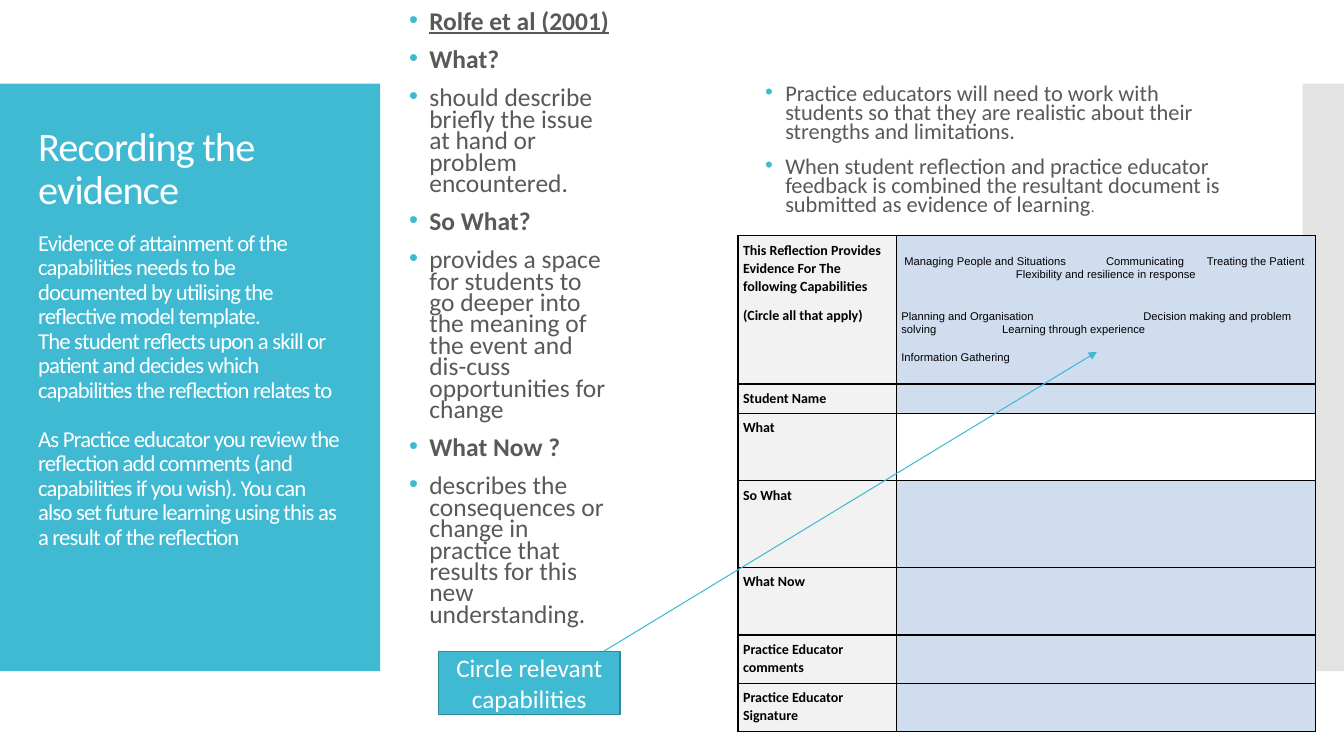
from dataclasses import dataclass

from lxml import etree
from pptx import Presentation
from pptx.dml.color import RGBColor
from pptx.enum.shapes import MSO_CONNECTOR, MSO_SHAPE
from pptx.enum.text import MSO_ANCHOR, PP_ALIGN
from pptx.oxml.ns import qn
from pptx.util import Inches, Pt

RECTANGLE = MSO_SHAPE.RECTANGLE
STRAIGHT = MSO_CONNECTOR.STRAIGHT
MIDDLE = MSO_ANCHOR.MIDDLE
CENTER = PP_ALIGN.CENTER


@dataclass(frozen=True)
class Theme:
    accent: str = "40BAD2"
    accent_dark: str = "2F8A9B"
    side: str = "C8C8C8"
    white: str = "FFFFFF"
    black: str = "000000"
    text: str = "595959"
    label_fill: str = "F2F2F2"
    field_fill: str = "D0DDEF"
    font: str = "Calibri"
    form_font: str = "Arial"
    title: float = 28.8
    intro: float = 16.2
    model: float = 18.2
    note: float = 16
    callout: float = 18
    label: float = 10
    option: float = 8
    small: float = 11


THEME = Theme()

INTRO = [
    ("Evidence of attainment of the capabilities needs to be documented by "
     "utilising the reflective model template.", 13),
    ("The student reflects upon a skill or patient and decides which "
     "capabilities the reflection relates to", 0),
    ("As Practice educator you review the reflection add comments (and "
     "capabilities if you wish). You can also set future learning using this "
     "as a result of the reflection", 17.5),
]
MODEL = [
    ("What?", "should describe briefly the issue at hand or problem encountered."),
    ("So What?", "provides a space for students to go deeper into the meaning of "
     "the event and dis-cuss opportunities for change"),
    ("What Now ?", "describes the consequences or change in practice that results "
     "for this new understanding."),
]
# Label, row height and field fill of each form row
FORM_ROWS = [
    ("This Reflection Provides Evidence For The following Capabilities", 1.47, THEME.field_fill),
    ("Student Name", 0.29, THEME.field_fill),
    ("What", 0.67, THEME.white),
    ("So What", 0.86, THEME.field_fill),
    ("What Now", 0.67, THEME.field_fill),
    ("Practice Educator comments", 0.48, THEME.field_fill),
    ("Practice Educator Signature", 0.48, THEME.field_fill),
]
# Text, space before and alignment of each line of capabilities
CAPABILITIES = [
    ("Managing People and Situations\tCommunicating\tTreating the Patient\t"
     "Flexibility and resilience in response", 0, CENTER),
    ("Planning and Organisation\tDecision making and problem solving\t"
     "Learning through experience", 20, None),
    ("Information Gathering", 10, None),
]


def rgb(color):
    return RGBColor.from_string(color)


def add_run(paragraph, text, size, color, font=THEME.font, bold=False, underline=False):
    run = paragraph.add_run()
    run.text = text
    run.font.size = Pt(size)
    run.font.name = font
    run.font.color.rgb = rgb(color)
    run.font.bold = bold
    run.font.underline = underline
    return run


def next_paragraph(frame, spacing, before=0):
    """Use the empty first paragraph, then add further ones."""
    first = frame.paragraphs[0]
    if not first.runs:
        paragraph = first
    else:
        paragraph = frame.add_paragraph()
        paragraph.space_before = Pt(before)
    paragraph.line_spacing = spacing
    return paragraph


def add_text_frame(slide, left, top, width, height, extra_top=0, extra_bottom=0):
    box = slide.shapes.add_textbox(Inches(left), Inches(top), Inches(width), Inches(height))
    frame = box.text_frame
    frame.word_wrap = True
    frame.vertical_anchor = MIDDLE
    frame.margin_top = Inches(0.05 + extra_top)
    frame.margin_bottom = Inches(0.05 + extra_bottom)
    return frame


def add_bullet(frame):
    paragraph = next_paragraph(frame, 0.7, 12)
    properties = paragraph._p.get_or_add_pPr()
    properties.set("marL", str(Inches(0.2)))
    properties.set("indent", str(Inches(-0.2)))
    color = etree.SubElement(properties, qn("a:buClr"))
    etree.SubElement(color, qn("a:srgbClr"), val=THEME.accent)
    etree.SubElement(properties, qn("a:buFont"), typeface=THEME.form_font)
    etree.SubElement(properties, qn("a:buChar"), char="•")
    return paragraph


def add_rectangle(slide, left, top, width, height, fill):
    shape = slide.shapes.add_shape(
        RECTANGLE, Inches(left), Inches(top), Inches(width), Inches(height))
    shape.shadow.inherit = False
    shape.fill.solid()
    shape.fill.fore_color.rgb = rgb(fill)
    shape.line.fill.background()
    return shape


def style_cell(cell, fill):
    cell.margin_left = cell.margin_right = Inches(0.05)
    cell.margin_top = cell.margin_bottom = Inches(0.05)
    properties = cell._tc.get_or_add_tcPr()
    for side in ("a:lnL", "a:lnR", "a:lnT", "a:lnB"):
        border = etree.SubElement(properties, qn(side), w=str(Pt(1)))
        solid = etree.SubElement(border, qn("a:solidFill"))
        etree.SubElement(solid, qn("a:srgbClr"), val=THEME.black)
    cell.fill.solid()
    cell.fill.fore_color.rgb = rgb(fill)


def add_form(slide):
    heights = [row[1] for row in FORM_ROWS]
    table = slide.shapes.add_table(
        len(FORM_ROWS), 2, Inches(7.32), Inches(2.34), Inches(5.73), Inches(sum(heights))).table
    table.columns[0].width = Inches(1.57)
    table.columns[1].width = Inches(4.16)
    for index, (label, height, fill) in enumerate(FORM_ROWS):
        table.rows[index].height = Inches(height)
        label_cell, field = table.cell(index, 0), table.cell(index, 1)
        style_cell(label_cell, THEME.label_fill)
        style_cell(field, fill)
        paragraph = next_paragraph(label_cell.text_frame, 1.07)
        add_run(paragraph, label, THEME.label, THEME.black, bold=True)
        # Keeps an empty field from stretching its row
        etree.SubElement(field.text_frame.paragraphs[0]._p, qn("a:endParaRPr"),
                         sz=str(THEME.label * 100))

    paragraph = next_paragraph(table.cell(0, 0).text_frame, 1.07, 8)
    add_run(paragraph, "(Circle all that apply)", THEME.label, THEME.black, bold=True)

    # Capabilities to circle
    options = table.cell(0, 1)
    options.margin_top = Inches(0.18)
    for text, before, alignment in CAPABILITIES:
        paragraph = next_paragraph(options.text_frame, 1.07, before)
        paragraph.alignment = alignment
        if alignment is None:
            tabs = etree.SubElement(paragraph._p.get_or_add_pPr(), qn("a:tabLst"))
            for position in (1, 2.4):
                etree.SubElement(tabs, qn("a:tab"), pos=str(Inches(position)), algn="l")
        add_run(paragraph, text, THEME.option, THEME.black, THEME.form_font)


def add_arrow(slide, start, end):
    arrow = slide.shapes.add_connector(STRAIGHT, *map(Inches, start + end))
    arrow.line.color.rgb = rgb(THEME.accent)
    arrow.line.width = Pt(0.75)
    etree.SubElement(arrow.line._get_or_add_ln(), qn("a:tailEnd"), type="triangle")
    etree.SubElement(arrow._element.spPr, qn("a:effectLst"))


def main():
    presentation = Presentation()
    presentation.slide_width = Inches(13.33)
    presentation.slide_height = Inches(7.5)
    slide = presentation.slides.add_slide(presentation.slide_layouts[6])

    # Side panels
    add_rectangle(slide, 0, 0.83, 3.77, 5.83, THEME.accent)
    side = add_rectangle(slide, 12.92, 0.83, 0.42, 5.83, THEME.side)
    side_color = side._element.spPr.find(qn("a:solidFill"))[0]
    etree.SubElement(side_color, qn("a:alpha"), val="50000")

    # Title and introduction
    frame = add_text_frame(slide, 0.28, 0.79, 3.22, 5.67, extra_bottom=0.54)
    lines = [("Recording the evidence", 0, THEME.title)]
    lines += [(text, before, THEME.intro) for text, before in INTRO]
    for text, before, size in lines:
        run = add_run(next_paragraph(frame, 0.9, before), text, size, THEME.white)
        run.font._element.set("spc", "-60")

    # Reflective model
    frame = add_text_frame(slide, 3.96, 0.3, 2.19, 6.16, extra_bottom=0.4)
    add_run(add_bullet(frame), "Rolfe et al (2001)", THEME.model, THEME.text,
            bold=True, underline=True)
    for question, answer in MODEL:
        add_run(add_bullet(frame), question, THEME.model, THEME.text, bold=True)
        add_run(add_bullet(frame), answer, THEME.model, THEME.text)

    # Notes for practice educators
    frame = add_text_frame(slide, 7.49, 0.46, 4.86, 2.21, extra_top=0.17)
    add_run(add_bullet(frame), "Practice educators will need to work with students so that "
            "they are realistic about their strengths and limitations.", THEME.note, THEME.text)
    paragraph = add_bullet(frame)
    add_run(paragraph, "When student reflection and practice educator feedback is combined "
            "the resultant document is submitted as evidence of learning", THEME.note, THEME.text)
    add_run(paragraph, ".", THEME.small, THEME.text)
    add_run(add_bullet(frame), " ", THEME.small, THEME.text)

    # Reflection form
    add_form(slide)

    # Callout and its arrow
    callout = add_rectangle(slide, 4.35, 6.46, 1.8, 0.63, THEME.accent)
    callout.line.color.rgb = rgb(THEME.accent_dark)
    callout.line.width = Pt(0.85)
    callout.text_frame.word_wrap = True
    callout.text_frame.vertical_anchor = MIDDLE
    paragraph = next_paragraph(callout.text_frame, 1.0)
    paragraph.alignment = CENTER
    add_run(paragraph, "Circle relevant capabilities", THEME.callout, THEME.white)
    add_arrow(slide, (5.99, 6.46), (10.88, 3.49))

    presentation.save("out.pptx")


if __name__ == "__main__":
    main()
